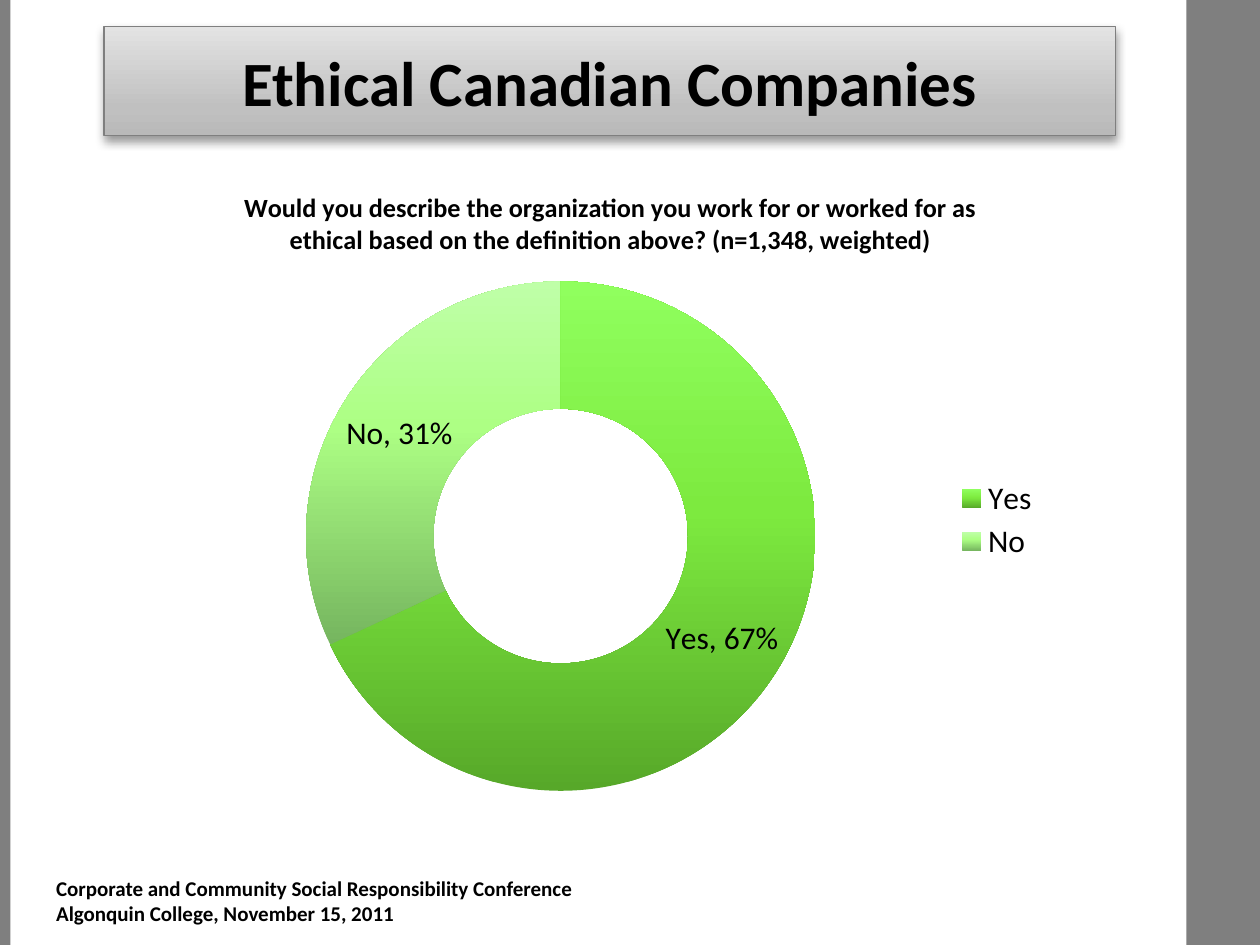
import pptx
import pptx.chart.data
import pptx.dml.color
import pptx.enum.chart
import pptx.enum.shapes
import pptx.enum.text
import pptx.oxml
import pptx.oxml.ns
import pptx.util
from pptx.util import Pt

COLOURS = {"black": "000000", "white": "FFFFFF", "bar": "7F7F7F"}
GRADIENTS = {
    "title": [(0, "B9B9B9"), (25, "C0C0C0"), (100, "E3E3E3")],
    "Yes": [(0, "57A829"), (55, "7DEA3F"), (100, "90FF5E")],
    "No": [(0, "75B55F"), (60, "ADFF84"), (100, "BFFFA8")],
}
FONT = "Calibri"
SLIDE_WIDTH, SLIDE_HEIGHT = 720, 540
NAMESPACE = pptx.oxml.ns.nsdecls("a")


def rgb(name):
    return pptx.dml.color.RGBColor.from_string(COLOURS[name])


def set_font(font, size, bold=False):
    font.name = FONT
    font.size = Pt(size)
    font.bold = bold
    font.color.rgb = rgb("black")


def set_gradient(fill, stops):
    """Fill with stops given as (percent, hex), running from bottom to top."""
    fill.gradient()
    fill.gradient_angle = 90
    stop_list = fill._xPr.find(pptx.oxml.ns.qn("a:gradFill")).find(pptx.oxml.ns.qn("a:gsLst"))
    for stop in list(stop_list):
        stop_list.remove(stop)
    for percent, colour in stops:
        stop_list.append(pptx.oxml.parse_xml(
            f'<a:gs {NAMESPACE} pos="{percent * 1000}"><a:srgbClr val="{colour}"/></a:gs>'))


def set_layout(element, left, top, width, height, inner=False):
    """Place a chart part by fractions of the chart area."""
    layout = element.find(pptx.oxml.ns.qn("c:layout"))
    if layout is not None:
        element.remove(layout)
    target = '<c:layoutTarget val="inner"/>' if inner else ""
    layout = pptx.oxml.parse_xml(
        f'<c:layout {pptx.oxml.ns.nsdecls("c")}><c:manualLayout>{target}'
        '<c:xMode val="edge"/><c:yMode val="edge"/>'
        f'<c:x val="{left}"/><c:y val="{top}"/><c:w val="{width}"/><c:h val="{height}"/>'
        '</c:manualLayout></c:layout>')
    position = element.find(pptx.oxml.ns.qn("c:legendPos"))
    if position is None:
        element.insert(0, layout)
    else:
        position.addnext(layout)


def add_side_bar(slide, left, width):
    bar = slide.shapes.add_shape(
        pptx.enum.shapes.MSO_SHAPE.RECTANGLE, Pt(left), 0, Pt(width), Pt(SLIDE_HEIGHT))
    bar.shadow.inherit = False
    bar.fill.solid()
    bar.fill.fore_color.rgb = rgb("bar")
    bar.line.fill.background()


def add_title(slide, left, top, width, height):
    title = slide.shapes.title
    title.left, title.top, title.width, title.height = map(Pt, (left, top, width, height))
    set_gradient(title.fill, GRADIENTS["title"])
    title.line.color.rgb = rgb("bar")
    title.line.width = Pt(0.75)
    title._element.spPr.append(pptx.oxml.parse_xml(
        f'<a:effectLst {NAMESPACE}><a:outerShdw blurRad="{Pt(5.2)}" dist="{Pt(3)}" '
        'dir="5400000" rotWithShape="0"><a:srgbClr val="000000"><a:alpha val="40000"/>'
        '</a:srgbClr></a:outerShdw></a:effectLst>'))
    frame = title.text_frame
    frame.text = "Ethical Canadian Companies"
    frame.vertical_anchor = pptx.enum.text.MSO_ANCHOR.MIDDLE
    paragraph = frame.paragraphs[0]
    paragraph.alignment = pptx.enum.text.PP_ALIGN.CENTER
    set_font(paragraph.font, 36, bold=True)


def add_ethics_chart(slide, left, top, width, height):
    data = pptx.chart.data.CategoryChartData(number_format="0")
    data.categories = ["Yes", "No"]
    data.add_series("Series 1", [68, 32])
    chart = slide.shapes.add_chart(
        pptx.enum.chart.XL_CHART_TYPE.DOUGHNUT,
        Pt(left), Pt(top), Pt(width), Pt(height), data).chart
    set_font(chart.font, 18)

    chart.has_title = True
    title_frame = chart.chart_title.text_frame
    title_frame.text = ("Would you describe the organization you work for or worked for as "
                        "ethical based on the definition above? (n=1,348, weighted)")
    set_font(title_frame.paragraphs[0].font, 15, bold=True)
    chart.chart_title.include_in_layout = False

    chart.has_legend = True
    chart.legend.position = pptx.enum.chart.XL_LEGEND_POSITION.RIGHT
    chart.legend.include_in_layout = False
    set_font(chart.legend.font, 18)
    set_layout(chart.legend._element, 0.83, 0.48, 0.12, 0.14)
    set_layout(chart._chartSpace.chart.plotArea, 0.19, 0.18, 0.52, 0.79, inner=True)

    plot = chart.plots[0]
    plot.vary_by_categories = True
    plot.has_data_labels = True
    plot.data_labels.show_percentage = True
    plot.data_labels.show_value = False
    plot.data_labels.number_format = "0%"
    plot.data_labels.number_format_is_linked = False
    set_font(plot.data_labels.font, 18)
    for index, (answer, label) in enumerate([("Yes", "Yes, 67%"), ("No", "No, 31%")]):
        point = plot.series[0].points[index]
        set_gradient(point.format.fill, GRADIENTS[answer])
        point.format.line.fill.background()
        label_frame = point.data_label.text_frame
        label_frame.text = label
        set_font(label_frame.paragraphs[0].font, 18)


def add_footer(slide, left, top, width, height):
    frame = slide.shapes.add_textbox(Pt(left), Pt(top), Pt(width), Pt(height)).text_frame
    frame.word_wrap = True
    frame.vertical_anchor = pptx.enum.text.MSO_ANCHOR.MIDDLE
    frame.text = ("Corporate and Community Social Responsibility Conference "
                  "Algonquin College, November 15, 2011")
    set_font(frame.paragraphs[0].font, 12, bold=True)


def main():
    presentation = pptx.Presentation()
    presentation.slide_width, presentation.slide_height = Pt(SLIDE_WIDTH), Pt(SLIDE_HEIGHT)
    slide = presentation.slides.add_slide(presentation.slide_layouts[5])
    slide.background.fill.solid()
    slide.background.fill.fore_color.rgb = rgb("white")
    add_side_bar(slide, 678, SLIDE_WIDTH - 678)
    add_side_bar(slide, 0, 6)
    add_title(slide, 59.5, 15, 578, 62.5)
    add_footer(slide, 25, 502.5, 335, 24)
    add_ethics_chart(slide, 65.5, 94.5, 566.5, 368.5)
    presentation.save("out.pptx")


if __name__ == "__main__":
    main()
